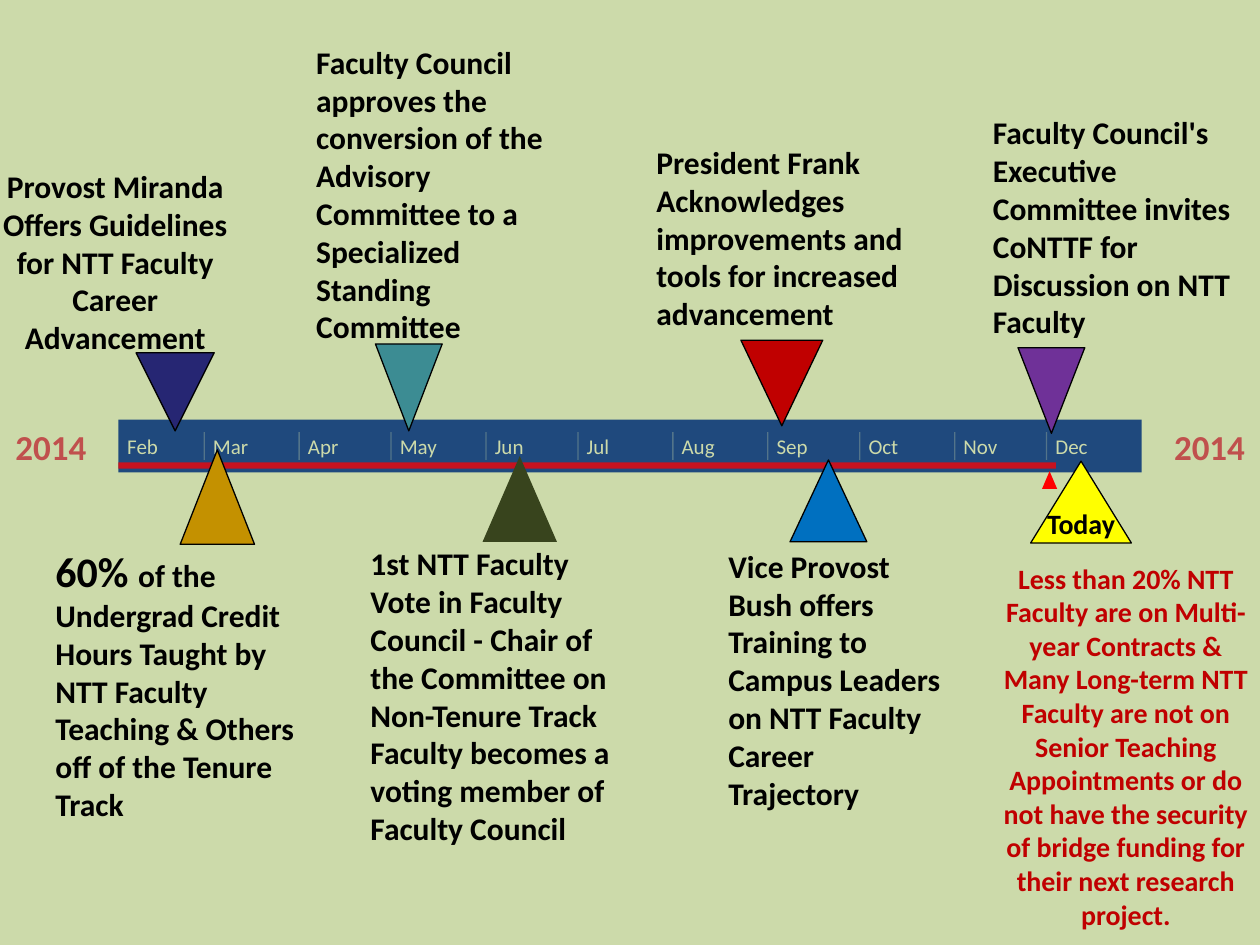
import itertools

import lxml.etree
import pptx
import pptx.dml.color
import pptx.enum.shapes
import pptx.enum.text
import pptx.oxml.ns
import pptx.util

SHAPE = pptx.enum.shapes.MSO_SHAPE
ALIGN = pptx.enum.text.PP_ALIGN
COLS, ROWS = 100, 75  # grid over the whole slide
DAYS = {"Feb": 28, "Mar": 31, "Apr": 30, "May": 31, "Jun": 30, "Jul": 31,
        "Aug": 31, "Sep": 30, "Oct": 31, "Nov": 30, "Dec": 31}
PALE, BLACK, RED = "CCDAAA", "000000", "C00000"

deck = pptx.Presentation()
deck.slide_width = pptx.util.Inches(10)
deck.slide_height = pptx.util.Inches(7.5)


def span(x, y, w, h):
    """Turn grid columns and rows into slide lengths."""
    col, row = deck.slide_width / COLS, deck.slide_height / ROWS
    return [round(n) for n in (x * col, y * row, w * col, h * row)]


def paint(fmt, tone, alpha=None):
    """Fill with a hex colour, at a given percent of opacity."""
    fmt.solid()
    fmt.fore_color.rgb = pptx.dml.color.RGBColor.from_string(tone)
    if alpha:
        node = fmt._xPr.find(".//" + pptx.oxml.ns.qn("a:srgbClr"))
        lxml.etree.SubElement(node, pptx.oxml.ns.qn("a:alpha"),
                              val=str(alpha * 1000))


def block(slide, kind, box, tone, alpha=None, edge=False):
    shape = slide.shapes.add_shape(kind, *span(*box))
    shape.shadow.inherit = False
    paint(shape.fill, tone, alpha)
    if edge:
        paint(shape.line.fill, BLACK)
        shape.line.width = pptx.util.Pt(0.75)
    else:
        shape.line.fill.background()
    return shape


def label(slide, box, text, size, tone, bold=True, align=ALIGN.LEFT, wrap=True):
    """Place one paragraph; text may be a list of (words, size) runs."""
    frame = slide.shapes.add_textbox(*span(*box)).text_frame
    frame.margin_left = frame.margin_right = 0
    frame.margin_top = frame.margin_bottom = 0
    frame.word_wrap = wrap
    frame.vertical_anchor = pptx.enum.text.MSO_ANCHOR.MIDDLE
    para = frame.paragraphs[0]
    para.alignment = align
    for words, points in text if isinstance(text, list) else [(text, size)]:
        run = para.add_run()
        run.text = words
        run.font.name = "Calibri"
        run.font.size = pptx.util.Pt(points)
        run.font.bold = bold
        paint(run.font.fill, tone)


def tick(slide, x, y, h):
    left, top, _, high = span(x, y, 0, h)
    line = slide.shapes.add_connector(
        pptx.enum.shapes.MSO_CONNECTOR.STRAIGHT, left, top, left, top + high)
    paint(line.line.fill, PALE, 30)
    line.line.width = pptx.util.Pt(0.75)
    lxml.etree.SubElement(line._element.spPr, pptx.oxml.ns.qn("a:effectLst"))


def band(slide, box):
    """Month band with elapsed bar, day pointer and a year at each end."""
    x, y, w, h = box
    for left, wide in ((0, 8.1), (92, 8)):
        label(slide, (left, y + 0.4, wide, 3.4), "2014", 20, "C0504D",
              align=ALIGN.CENTER)
    block(slide, SHAPE.RECTANGLE, box, "1F497D")
    block(slide, SHAPE.RECTANGLE, (x, y + 3.4, 74.4, 0.5), "FF0000", 75)
    block(slide, SHAPE.ISOSCELES_TRIANGLE, (x + 73.3, y + 4.1, 1.2, 1.4), "FF0000")

    # Each month starts after the days of the months before it
    starts = itertools.accumulate(DAYS.values(), initial=0)
    for month, start in zip(DAYS, starts):
        left = x + w * start / sum(DAYS.values())
        if start:
            tick(slide, left, y + 1, 2.2)
        label(slide, (left + 0.7, y + 1.1, 3, 2), month, 12, PALE,
              bold=False, wrap=False)


def event(slide, box, text, tone, mark, above, size=18, ink=BLACK,
          align=ALIGN.LEFT, edge=True):
    """Text with a triangle; mark is shift, gap, width, height."""
    x, y, w, h = box
    shift, gap, wide, high = mark
    top = y + h + gap if above else y - gap - high
    flag = block(slide, SHAPE.ISOSCELES_TRIANGLE,
                 (x + shift, top, wide, high), tone, edge=edge)
    if above:
        flag._element.spPr.xfrm.set("flipV", "1")
    label(slide, box, text, size, ink, align=align)


def main():
    slide = deck.slides.add_slide(deck.slide_layouts[6])
    paint(slide.background.fill, PALE)
    band(slide, (9.4, 33.3, 81.2, 4.2))

    # Events above the band
    event(slide, (0, 13.2, 18.3, 15.1),
          "Provost Miranda Offers Guidelines for NTT Faculty Career Advancement",
          "262673", (10.8, -0.3, 6.2, 6.2), True, align=ALIGN.CENTER)
    event(slide, (25.1, 3.3, 20.7, 24.2),
          "Faculty Council approves the conversion of the Advisory Committee "
          "to a Specialized Standing Committee",
          "3C8C93", (4.7, -0.2, 5.3, 6.9), True)
    event(slide, (52.1, 11.3, 20.4, 15.1),
          "President Frank Acknowledges improvements and tools for increased "
          "advancement", RED, (6.7, 0.6, 6.5, 6.8), True)
    event(slide, (78.8, 8.9, 20.5, 18.2),
          "Faculty Council's Executive Committee invites CoNTTF for Discussion "
          "on NTT Faculty", "6F3198", (2, 0.5, 5.3, 6.8), True)

    # Events below the band
    event(slide, (4.4, 43.2, 20.3, 22.2),
          [("60% ", 24), ("of the Undergrad Credit Hours Taught by NTT Faculty "
                          "Teaching & Others off of the Tenure Track", 18)],
          "C49100", (9.9, 0, 5.9, 7.5), False)
    event(slide, (29.4, 43.1, 21.1, 24.2),
          "1st NTT Faculty Vote in Faculty Council - Chair of the Committee on "
          "Non-Tenure Track Faculty becomes a voting member of Faculty Council",
          "38441D", (8.9, 0.1, 5.9, 6.8), False, edge=False)
    event(slide, (57.8, 43.3, 17.2, 21.2),
          "Vice Provost Bush offers Training to Campus Leaders on NTT Faculty "
          "Career Trajectory", "0070C0", (4.9, 0.3, 6.1, 6.5), False)
    event(slide, (79.4, 44.4, 19.9, 29.6),
          "Less than 20% NTT Faculty are on Multi-year Contracts & Many "
          "Long-term NTT Faculty are not on Senior Teaching Appointments or do "
          "not have the security of bridge funding for their next research "
          "project.", "FFFF00", (2.4, 1.3, 8, 6.5), False,
          size=16, ink=RED, align=ALIGN.CENTER)
    label(slide, (82.2, 40.2, 7.2, 2.7), "Today", 16, BLACK,
          align=ALIGN.CENTER, wrap=False)
    deck.save("out.pptx")


if __name__ == "__main__":
    main()
